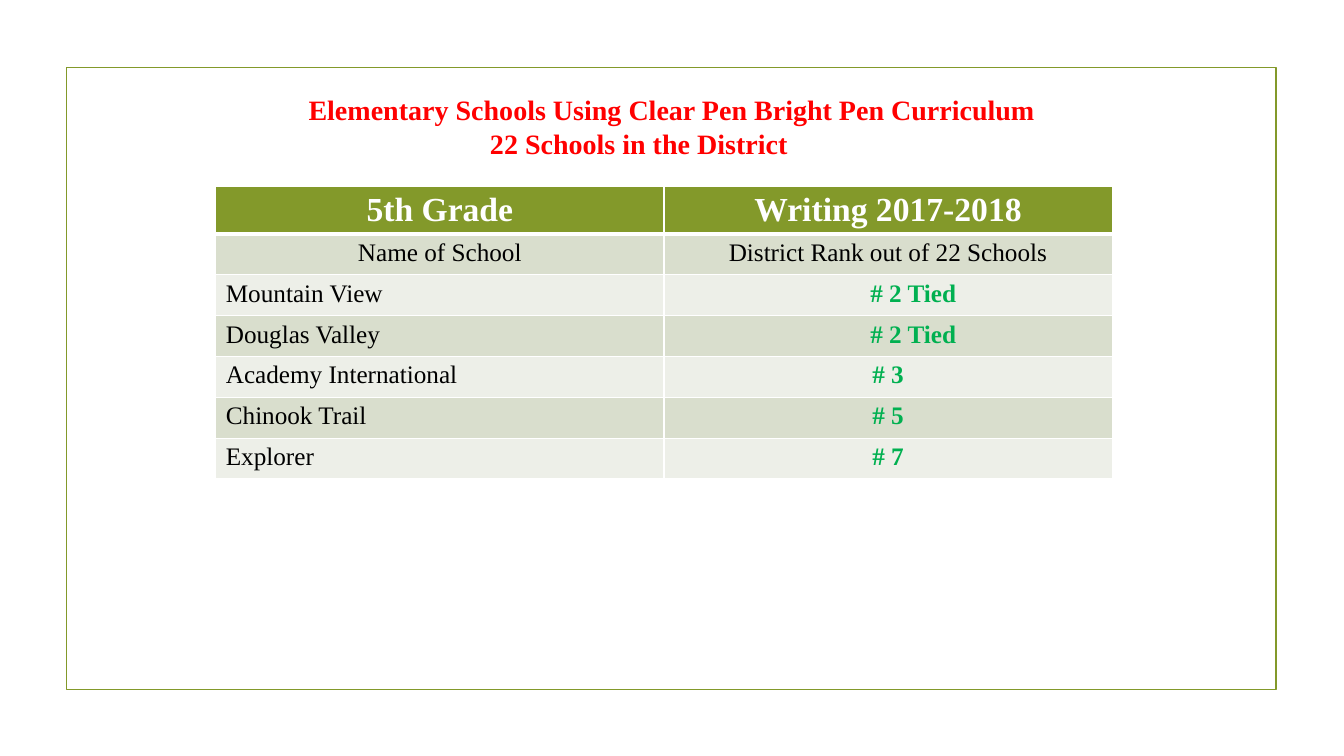
from lxml.etree import SubElement
from pptx import Presentation
from pptx.dml.color import RGBColor
from pptx.enum.shapes import MSO_SHAPE
from pptx.enum.text import MSO_ANCHOR, MSO_AUTO_SIZE, PP_ALIGN
from pptx.oxml.ns import qn
from pptx.util import Inches, Pt

HUES = {"olive": "83992A", "sage": "D9DECD", "mist": "EDEFE8", "white": "FFFFFF",
        "black": "000000", "green": "00B050", "red": "FF0000"}
FONT = "Times New Roman"
HEAD = ["Elementary Schools Using Clear Pen Bright Pen Curriculum",
        "22 Schools in the District"]
ROWS = [("5th Grade", "Writing 2017-2018"),
        ("Name of School", "District Rank out of 22 Schools"),
        ("Mountain View", "# 2 Tied"),
        ("Douglas Valley", "# 2 Tied"),
        ("Academy International", "# 3"),
        ("Chinook Trail", "# 5"),
        ("Explorer", "# 7")]


class Deck:
    """Holds the style and the current slide."""

    def __init__(self):
        self.prs = Presentation()
        self.prs.slide_width, self.prs.slide_height = Inches(13.33), Inches(7.5)
        self.slide = self.prs.slides.add_slide(self.prs.slide_layouts[5])

    def hue(self, name):
        return RGBColor.from_string(HUES[name])

    def label(self, para, text, size, hue, bold, align, indent=0):
        para.alignment = align
        if indent:
            para._p.get_or_add_pPr().set("marL", str(Inches(indent)))
        run = para.add_run()
        run.text = text
        run.font.name, run.font.size, run.font.bold = FONT, Pt(size), bold
        run.font.color.rgb = self.hue(hue)

    def frame(self, x, y, w, h):
        box = self.slide.shapes.add_shape(
            MSO_SHAPE.RECTANGLE, Inches(x), Inches(y), Inches(w), Inches(h))
        box.shadow.inherit = False
        box.fill.background()
        box.line.color.rgb = self.hue("olive")
        box.line.width = Pt(1.25)

    def title(self, lines, x, y, w, h):
        box = self.slide.shapes.title
        box.left, box.top, box.width, box.height = map(Inches, (x, y, w, h))
        text = box.text_frame
        text.word_wrap = False
        text.auto_size = MSO_AUTO_SIZE.NONE
        text.vertical_anchor = MSO_ANCHOR.TOP
        for i, line in enumerate(lines):
            para = text.add_paragraph() if i else text.paragraphs[0]
            para.line_spacing = Pt(24)
            self.label(para, line, 20, "red", True, PP_ALIGN.LEFT, 1.8 * i)

    def edge(self, cell, row):
        props = cell._tc.get_or_add_tcPr()
        wide = {"lnB": row == 0, "lnT": row == 1}
        for i, side in enumerate(("lnL", "lnR", "lnT", "lnB")):
            line = SubElement(props, qn("a:" + side), w=str(Pt(3 if wide.get(side) else 1)))
            fill = SubElement(line, qn("a:solidFill"))
            SubElement(fill, qn("a:srgbClr"), val=HUES["white"])
            props.insert(i, line)

    def table(self, rows, x, y, w, h):
        grid = self.slide.shapes.add_table(
            len(rows), len(rows[0]), Inches(x), Inches(y), Inches(w), Inches(h)).table
        for r, row in enumerate(rows):
            for c, text in enumerate(row):
                cell = grid.cell(r, c)
                cell.fill.solid()
                cell.fill.fore_color.rgb = self.hue(
                    "olive" if r == 0 else "sage" if r % 2 else "mist")
                self.edge(cell, r)
                rank = r > 1 and c == 1
                hue = "white" if r == 0 else "green" if rank else "black"
                align = PP_ALIGN.LEFT if r > 1 and c == 0 else PP_ALIGN.CENTER
                self.label(cell.text_frame.paragraphs[0], text, 18 if r else 24, hue,
                           r == 0 or rank, align, 0.5 if "Tied" in text else 0)


def main():
    deck = Deck()
    deck.frame(0.66, 0.67, 12, 6.17)
    deck.table(ROWS, 2.14, 1.85, 8.89, 2.84)
    deck.title(HEAD, 2.96, 0.87, 7.54, 0.77)
    deck.prs.save("out.pptx")


if __name__ == "__main__":
    main()
